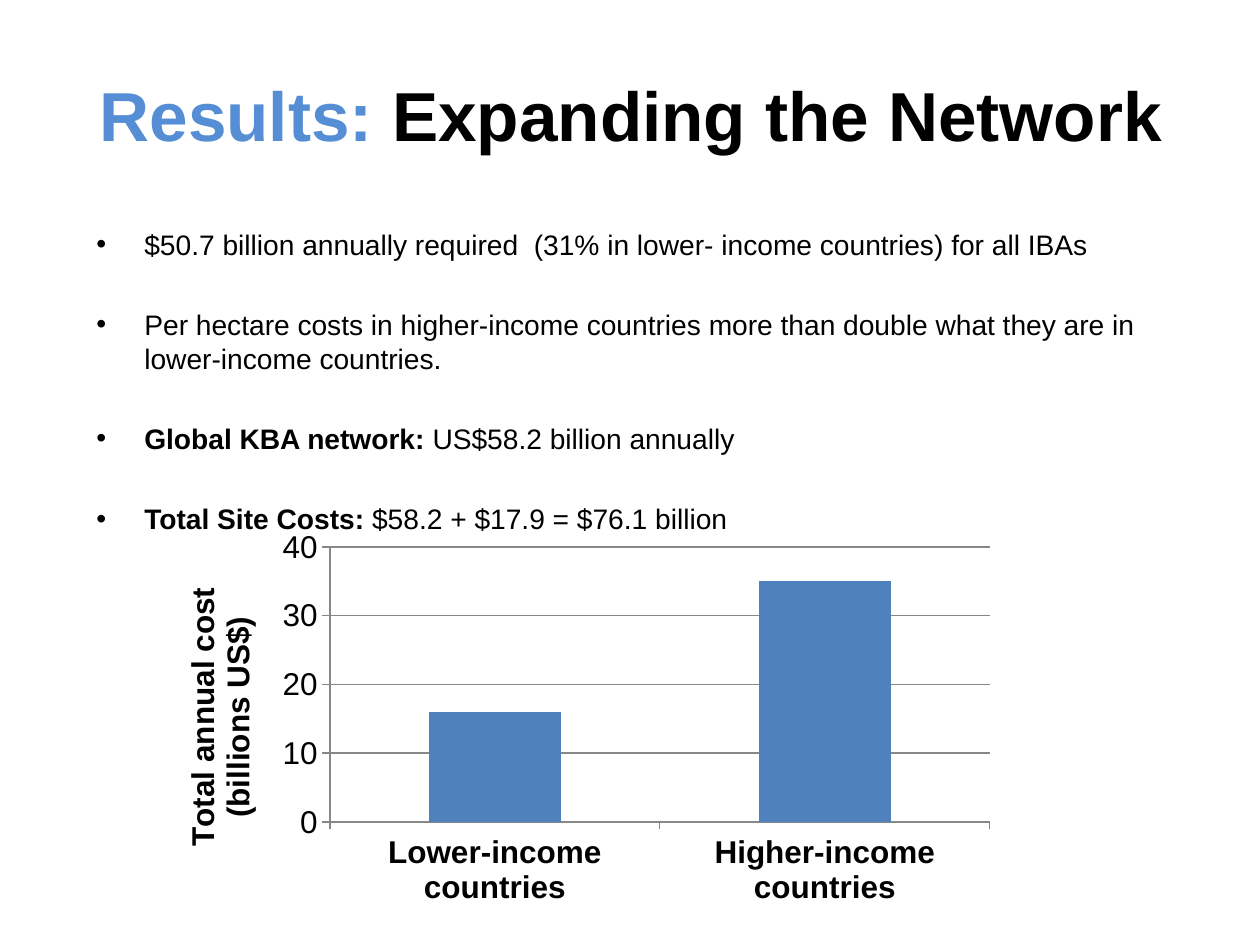
from pptx import Presentation
from pptx.chart.data import CategoryChartData
from pptx.dml.color import RGBColor
from pptx.enum.chart import XL_CHART_TYPE, XL_TICK_MARK
from pptx.enum.text import MSO_ANCHOR, MSO_AUTO_SIZE, PP_ALIGN
from pptx.oxml import parse_xml
from pptx.oxml.ns import nsdecls
from pptx.util import Emu, Pt


def px(length):
    return Emu(round(length * 914400 / 126))


def colour(value):
    return RGBColor.from_string(value)


def style_font(font, size=18, bold=False, ink="000000", face="Arial"):
    font.name = face
    font.size = Pt(size)
    font.bold = bold
    font.color.rgb = colour(ink)


def add_span(para, text, **style):
    span = para.add_run()
    span.text = text
    style_font(span.font, **style)


class SlideBuilder:
    accent = "558ED5"
    bar = "4F81BD"
    rule = "878787"
    body_size = 16.1

    def __init__(self, deck):
        self.page = deck.slides.add_slide(deck.slide_layouts[5])

    def title(self, area, lead, rest):
        box = self.page.shapes.title
        box.left, box.top, box.width, box.height = map(px, area)
        frame = box.text_frame
        frame.word_wrap = True
        frame.auto_size = MSO_AUTO_SIZE.NONE
        frame.vertical_anchor = MSO_ANCHOR.MIDDLE
        para = frame.paragraphs[0]
        para.alignment = PP_ALIGN.CENTER
        add_span(para, lead, size=39.6, bold=True, ink=self.accent)
        add_span(para, rest, size=39.6, bold=True)

    def bullets(self, area, items, top_margin, gap, indent):
        frame = self.page.shapes.add_textbox(*map(px, area)).text_frame
        frame.word_wrap = True
        frame.margin_top = px(top_margin)
        for index, (lead, rest) in enumerate(items):
            para = frame.add_paragraph() if index else frame.paragraphs[0]
            properties = para._p.get_or_add_pPr()
            properties.set("marL", str(px(indent)))
            properties.set("indent", str(-px(indent)))
            properties.append(parse_xml(f'<a:buFont {nsdecls("a")} typeface="Arial"/>'))
            properties.append(parse_xml(f'<a:buChar {nsdecls("a")} char="•"/>'))
            if index:
                para.space_before = Pt(gap)
            if lead:
                add_span(para, lead, size=self.body_size, bold=True)
            add_span(para, rest, size=self.body_size)

    def column_chart(self, area, plot, categories, values, axis_title):
        data = CategoryChartData()
        data.categories = categories
        data.add_series("Series 1", values)
        chart = self.page.shapes.add_chart(
            XL_CHART_TYPE.COLUMN_CLUSTERED, *map(px, area), data
        ).chart
        chart.has_legend = False
        chart.has_title = False
        style_font(chart.font)

        columns = chart.plots[0]
        columns.gap_width = 150
        columns.vary_by_categories = False
        fill = columns.series[0].format.fill
        fill.solid()
        fill.fore_color.rgb = colour(self.bar)

        for axis, bold in ((chart.category_axis, True), (chart.value_axis, False)):
            style_font(axis.tick_labels.font, bold=bold)
            axis.major_tick_mark = XL_TICK_MARK.OUTSIDE
            axis.minor_tick_mark = XL_TICK_MARK.NONE
            axis.format.line.color.rgb = colour(self.rule)

        scale = chart.value_axis
        scale.minimum_scale, scale.maximum_scale, scale.major_unit = 0, 40, 10
        scale.has_major_gridlines = True
        scale.major_gridlines.format.line.color.rgb = colour(self.rule)
        scale.has_title = True
        add_span(scale.axis_title.text_frame.paragraphs[0], axis_title, bold=True)
        self.place_plot(chart, area, plot)

    def place_plot(self, chart, area, plot):
        left, top, width, height = area
        shares = {
            "x": (plot[0] - left) / width,
            "y": (plot[1] - top) / height,
            "w": plot[2] / width,
            "h": plot[3] / height,
        }
        modes = '<c:xMode val="edge"/><c:yMode val="edge"/>'
        sizes = "".join(f'<c:{key} val="{share:.4f}"/>' for key, share in shares.items())
        layout = parse_xml(
            f'<c:layout {nsdecls("c")}><c:manualLayout><c:layoutTarget val="inner"/>'
            f"{modes}{sizes}</c:manualLayout></c:layout>"
        )
        plot_area = chart._chartSpace.chart.plotArea
        for old in plot_area.findall(layout.tag):
            plot_area.remove(old)
        plot_area.insert(0, layout)


def main():
    deck = Presentation()
    deck.slide_width, deck.slide_height = px(1260), px(945)
    builder = SlideBuilder(deck)
    builder.title((64, 35, 1134, 158), "Results: ", "Expanding the Network")
    builder.bullets(
        (84, 185, 1121, 328),
        [
            ("", "$50.7 billion annually required  (31% in lower- income countries) for all IBAs"),
            ("", "Per hectare costs in higher-income countries more than double what they are in lower-income countries."),
            ("Global KBA network: ", "US$58.2 billion annually"),
            ("Total Site Costs: ", "$58.2 + $17.9 = $76.1 billion"),
        ],
        top_margin=42,
        gap=26.5,
        indent=48,
    )
    builder.column_chart(
        (154, 522, 853, 391),
        (330, 547, 660, 275),
        ["Lower-income countries", "Higher-income countries"],
        [16, 35],
        "Total annual cost (billions US$)",
    )
    deck.save("out.pptx")


if __name__ == "__main__":
    main()
